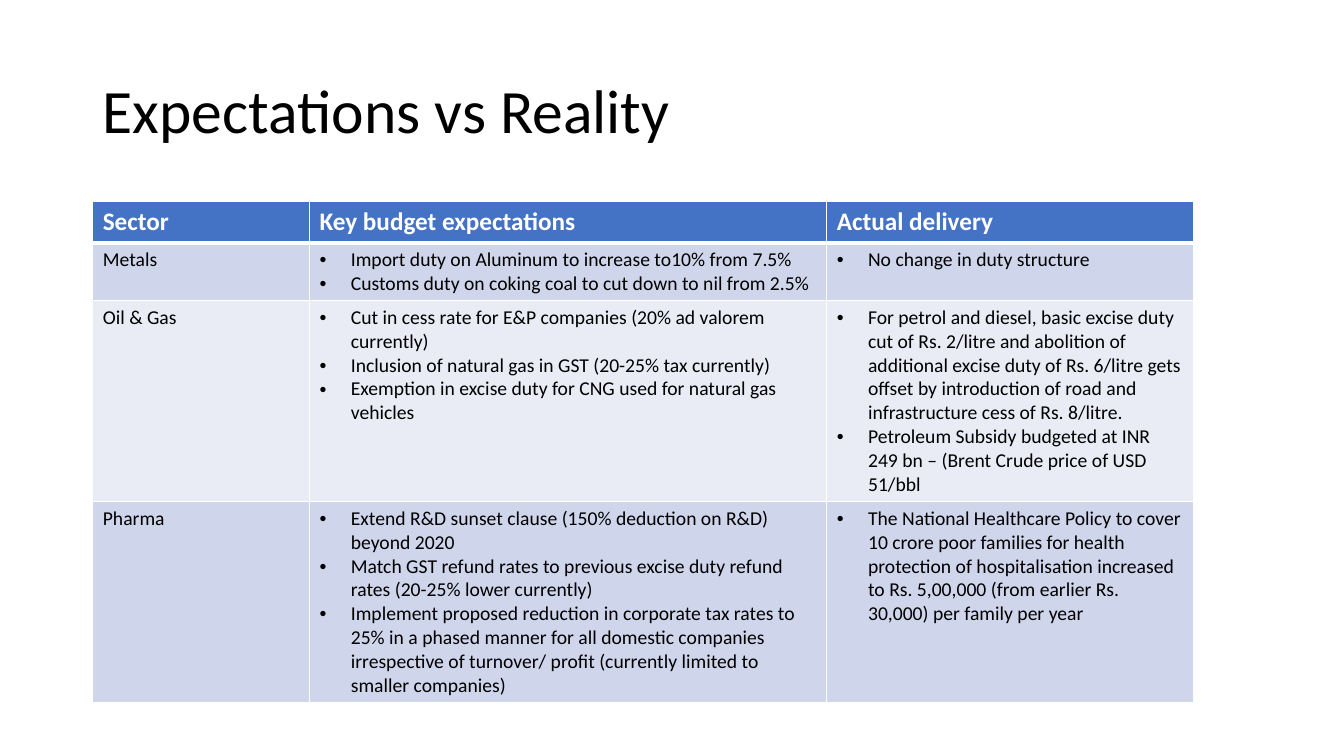
from lxml.etree import SubElement
from pptx import Presentation
from pptx.dml.color import RGBColor
from pptx.enum.text import MSO_ANCHOR, PP_ALIGN
from pptx.oxml.ns import qn
from pptx.util import Inches, Pt

FONT = "Calibri"
WHITE, BLACK = "FFFFFF", "000000"
HEADER_FILL = "4472C4"
BAND_FILLS = ["CFD5EA", "E9EBF5"]
COLUMN_WIDTHS = [2.15, 5.13, 3.64]
ROW_HEIGHT = 0.41
BULLET_INDENT = 0.31

HEADINGS = ["Sector", "Key budget expectations", "Actual delivery"]
SECTORS = [
    ("Metals",
     ["Import duty on Aluminum to increase to10% from 7.5%",
      "Customs duty on coking coal to cut down to nil from 2.5%"],
     ["No change in duty structure"]),
    ("Oil & Gas",
     ["Cut in cess rate for E&P companies (20% ad valorem currently)",
      "Inclusion of natural gas in GST (20-25% tax currently)",
      "Exemption in excise duty for CNG used for natural gas vehicles"],
     ["For petrol and diesel, basic excise duty cut of Rs. 2/litre and abolition of "
      "additional excise duty of Rs. 6/litre gets offset by introduction of road and "
      "infrastructure cess of Rs. 8/litre.",
      "Petroleum Subsidy budgeted at INR 249 bn – (Brent Crude price of USD 51/bbl"]),
    ("Pharma",
     ["Extend R&D sunset clause (150% deduction on R&D) beyond 2020",
      "Match GST refund rates to previous excise duty refund rates "
      "(20-25% lower currently)",
      "Implement proposed reduction in corporate tax rates to 25% in a phased manner "
      "for all domestic companies irrespective of turnover/ profit "
      "(currently limited to smaller companies)"],
     ["The National Healthcare Policy to cover 10 crore poor families for health "
      "protection of hospitalisation increased to Rs. 5,00,000 (from earlier "
      "Rs. 30,000) per family per year"]),
]


def color(hex_value):
    return RGBColor.from_string(hex_value)


def format_text(text_frame, size, font_color, bold=False):
    for paragraph in text_frame.paragraphs:
        paragraph.alignment = PP_ALIGN.LEFT
        for run in paragraph.runs:
            run.font.name = FONT
            run.font.size = Pt(size)
            run.font.bold = bold
            run.font.color.rgb = color(font_color)


def add_bullets(text_frame):
    for paragraph in text_frame.paragraphs:
        properties = paragraph._p.get_or_add_pPr()
        properties.set("marL", str(Inches(BULLET_INDENT)))
        properties.set("indent", str(-Inches(BULLET_INDENT)))
        SubElement(properties, qn("a:buFont"), typeface="Arial")
        SubElement(properties, qn("a:buChar"), char="•")


def set_borders(cell, top=1, bottom=1):
    properties = cell._tc.get_or_add_tcPr()
    for side, width in [("L", 1), ("R", 1), ("T", top), ("B", bottom)]:
        line = SubElement(properties, qn(f"a:ln{side}"), w=str(Pt(width)))
        fill = SubElement(line, qn("a:solidFill"))
        SubElement(fill, qn("a:srgbClr"), val=WHITE)


def add_title(slide, left, top, width, height):
    title = slide.shapes.title
    title.left, title.top = Inches(left), Inches(top)
    title.width, title.height = Inches(width), Inches(height)
    text_frame = title.text_frame
    text_frame.text = "Expectations vs Reality"
    text_frame.word_wrap = True
    text_frame.vertical_anchor = MSO_ANCHOR.MIDDLE
    text_frame.paragraphs[0].line_spacing = 0.9
    format_text(text_frame, 44, BLACK)


def add_sector_table(slide, left, top, width, height):
    frame = slide.shapes.add_table(
        len(SECTORS) + 1, len(HEADINGS),
        Inches(left), Inches(top), Inches(width), Inches(height))
    table = frame.table
    for column, column_width in zip(table.columns, COLUMN_WIDTHS):
        column.width = Inches(column_width)
    for row in table.rows:
        row.height = Inches(ROW_HEIGHT)  # rows grow with their text
    frame.height = Inches(height)

    # Header row
    for index, heading in enumerate(HEADINGS):
        cell = table.cell(0, index)
        cell.text_frame.text = heading
        format_text(cell.text_frame, 18, WHITE, bold=True)
        set_borders(cell, bottom=3)
        cell.fill.solid()
        cell.fill.fore_color.rgb = color(HEADER_FILL)

    # Sector rows, in alternating bands
    for row_index, (sector, *bullet_lists) in enumerate(SECTORS, start=1):
        for index, lines in enumerate([[sector], *bullet_lists]):
            cell = table.cell(row_index, index)
            cell.text_frame.text = "\n".join(lines)
            format_text(cell.text_frame, 14, BLACK)
            if index > 0:
                add_bullets(cell.text_frame)
            set_borders(cell, top=3 if row_index == 1 else 1)
            cell.fill.solid()
            cell.fill.fore_color.rgb = color(BAND_FILLS[(row_index - 1) % 2])


def main():
    presentation = Presentation()
    presentation.slide_width = Inches(13.33)
    presentation.slide_height = Inches(7.5)
    slide = presentation.slides.add_slide(presentation.slide_layouts[5])
    add_title(slide, 0.92, 0.4, 11.5, 1.45)
    add_sector_table(slide, 0.92, 2, sum(COLUMN_WIDTHS), 4.91)
    presentation.save("out.pptx")


if __name__ == "__main__":
    main()
